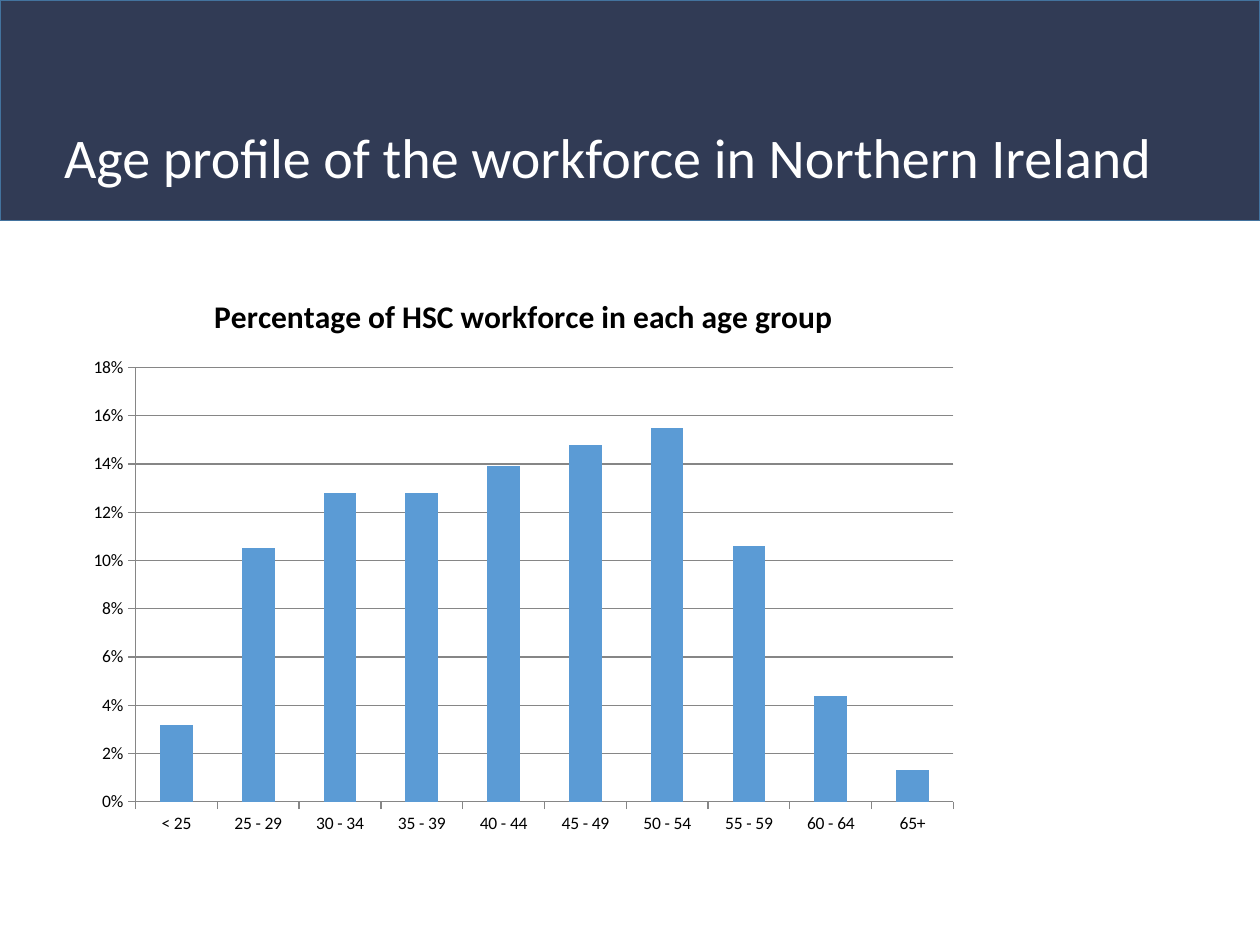
from pptx import Presentation
from pptx.chart.data import CategoryChartData
from pptx.dml.color import RGBColor
from pptx.enum.chart import XL_CHART_TYPE, XL_TICK_MARK
from pptx.enum.shapes import MSO_SHAPE
from pptx.util import Inches, Pt

NAVY = RGBColor(0x31, 0x3B, 0x55)
EDGE = RGBColor(0x43, 0x73, 0x9E)
BLUE = RGBColor(0x5B, 0x9B, 0xD5)
GRAY = RGBColor(0x86, 0x86, 0x86)
BLACK = RGBColor(0, 0, 0)
WHITE = RGBColor(0xFF, 0xFF, 0xFF)
FONT = "Calibri"

SHARES = {
    "< 25": 0.032, "25 - 29": 0.105, "30 - 34": 0.128, "35 - 39": 0.128,
    "40 - 44": 0.139, "45 - 49": 0.148, "50 - 54": 0.155, "55 - 59": 0.106,
    "60 - 64": 0.044, "65+": 0.013,
}


def add_text(frame, text, size=18, color=BLACK, bold=False, spacing=None):
    para = frame.paragraphs[0]
    para.line_spacing = spacing
    run = para.add_run()
    run.text = text
    font = run.font
    font.name, font.size, font.bold = FONT, Pt(size), bold
    font.color.rgb = color


def add_header(slide, left, top, width, height):
    # Banner
    band = slide.shapes.add_shape(MSO_SHAPE.RECTANGLE, left, top, width, height)
    band.shadow.inherit = False
    band.fill.solid()
    band.fill.fore_color.rgb = NAVY
    band.line.color.rgb = EDGE
    band.line.width = Pt(1)

    # Slide title
    box = slide.shapes.add_textbox(left + Inches(0.41), top + Inches(0.98),
                                   width - Inches(0.81), Inches(0.59))
    box.text_frame.word_wrap = True
    add_text(box.text_frame, "Age profile of the workforce in Northern Ireland",
             size=32, color=WHITE, spacing=0.9)


def style_axis(axis):
    axis.major_tick_mark = XL_TICK_MARK.OUTSIDE
    axis.minor_tick_mark = XL_TICK_MARK.NONE
    axis.format.line.color.rgb = GRAY
    axis.format.line.width = Pt(0.75)


def add_ages(slide, left, top, width, height):
    data = CategoryChartData(number_format="0%")
    data.categories = SHARES.keys()
    data.add_series("Series 1", SHARES.values())
    chart = slide.shapes.add_chart(XL_CHART_TYPE.COLUMN_CLUSTERED,
                                   left, top, width, height, data).chart
    chart.has_legend = False
    chart.font.name, chart.font.size = FONT, Pt(10)
    chart.font.color.rgb = BLACK
    add_text(chart.chart_title.text_frame,
             "Percentage of HSC workforce in each age group", bold=True)
    chart.chart_title.include_in_layout = False

    # Columns
    plot = chart.plots[0]
    plot.gap_width = 150
    plot.vary_by_categories = False
    fill = plot.series[0].format.fill
    fill.solid()
    fill.fore_color.rgb = BLUE

    # Axes and gridlines
    style_axis(chart.category_axis)
    axis = chart.value_axis
    style_axis(axis)
    axis.minimum_scale, axis.maximum_scale, axis.major_unit = 0, 0.18, 0.02
    axis.tick_labels.number_format = "0%"
    axis.tick_labels.number_format_is_linked = False
    axis.has_major_gridlines = True
    axis.major_gridlines.format.line.color.rgb = GRAY
    axis.major_gridlines.format.line.width = Pt(0.75)


def main():
    deck = Presentation()
    deck.slide_width, deck.slide_height = Inches(10), Inches(7.5)
    slide = deck.slides.add_slide(deck.slide_layouts[6])
    add_header(slide, 0, 0, deck.slide_width, Inches(1.75))
    add_ages(slide, Inches(0.6), Inches(2.15), Inches(7.11), Inches(4.56))
    deck.save("out.pptx")


if __name__ == "__main__":
    main()
